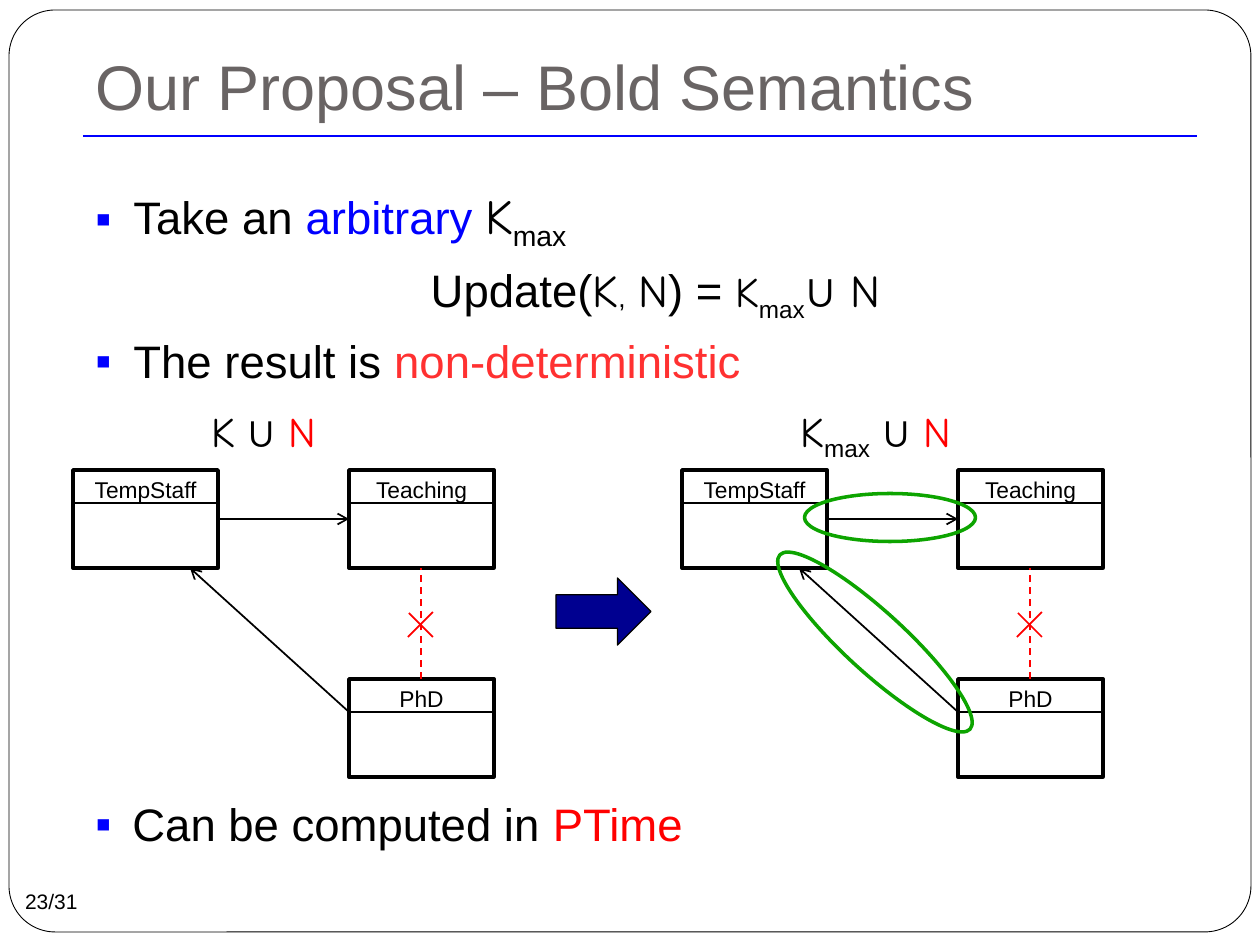
import dataclasses
import typing

import pptx
import pptx.dml.color
import pptx.enum.dml
import pptx.enum.shapes
import pptx.enum.text
import pptx.oxml.xmlchemy
import pptx.util
from pptx.oxml.ns import qn
import lxml.etree

PIXELS_PER_INCH = 126
SHAPES = pptx.enum.shapes.MSO_SHAPE
ALIGN = pptx.enum.text.PP_ALIGN
COMIC = "Comic Neue"
BLACK, WHITE, RED, BLUE, GREEN = "000000", "FFFFFF", "FF0000", "0000FF", "0DA400"


@dataclasses.dataclass(frozen=True)
class Run:
    text: str
    size: int
    color: str = BLACK
    font: str = "Arial"
    subscript: bool = False


@dataclasses.dataclass(frozen=True)
class Paragraph:
    runs: typing.Sequence[Run]
    alignment: typing.Any = ALIGN.LEFT
    indent: int = 0
    bullet: bool = False
    before: float = 0
    after: float = 0


@dataclasses.dataclass(frozen=True)
class Entity:
    name: str
    left: int
    top: int


@dataclasses.dataclass(frozen=True)
class Link:
    start: tuple[int, int]
    end: tuple[int, int]
    color: str = BLACK
    arrow: bool = False
    dashed: bool = False


ENTITY_WIDTH, ENTITY_HEIGHT, HEADER_HEIGHT = 145, 98, 33
ENTITIES = (Entity("TempStaff", 73, 470), Entity("Teaching", 349, 470), Entity("PhD", 349, 679))
LINKS = (
    Link((349, 712), (190, 568), arrow=True),
    Link((421, 679), (421, 568), RED, dashed=True),
    Link((433, 612), (408, 637), RED),
    Link((409, 613), (433, 637), RED),
    Link((218, 519), (349, 519), arrow=True),
)
DIAGRAM_OFFSETS = (0, 609)


def px(value: float) -> int:
    return round(value * 914400 / PIXELS_PER_INCH)


def rgb(color: str):
    return pptx.dml.color.RGBColor.from_string(color)


def set_attributes(target, values: dict) -> None:
    for name, value in values.items():
        setattr(target, name, value)


def write_text(frame, paragraphs: typing.Sequence[Paragraph], **frame_format) -> None:
    set_attributes(frame, {"word_wrap": True, "vertical_anchor": pptx.enum.text.MSO_ANCHOR.TOP, **frame_format})
    for index, item in enumerate(paragraphs):
        paragraph = frame.add_paragraph() if index else frame.paragraphs[0]
        set_attributes(paragraph, {
            "alignment": item.alignment,
            "space_before": pptx.util.Pt(item.before),
            "space_after": pptx.util.Pt(item.after),
        })
        properties = paragraph._p.get_or_add_pPr()
        if item.indent:
            properties.set("marL", str(px(item.indent)))
            properties.set("indent", str(-px(item.indent)))
        if item.bullet:
            color = lxml.etree.SubElement(properties, qn("a:buClr"))
            lxml.etree.SubElement(color, qn("a:srgbClr"), val=BLUE)
            lxml.etree.SubElement(properties, qn("a:buFont"), typeface="Arial")
            lxml.etree.SubElement(properties, qn("a:buChar"), char="▪")
        for piece in item.runs:
            run = paragraph.add_run()
            run.text = piece.text
            set_attributes(run.font, {"name": piece.font, "size": pptx.util.Pt(piece.size)})
            run.font.color.rgb = rgb(piece.color)
            if piece.subscript:
                run.font._element.set("baseline", "-25000")


def add_text(slide, left: int, top: int, width: int, height: int, *paragraphs: Paragraph, **frame_format) -> None:
    box = slide.shapes.add_textbox(px(left), px(top), px(width), px(height))
    write_text(box.text_frame, paragraphs, **frame_format)


def add_shape(slide, kind, left: int, top: int, width: int, height: int,
              fill: str | None, line: str, weight: float, rotation: float = 0):
    shape = slide.shapes.add_shape(kind, px(left), px(top), px(width), px(height))
    shape.shadow.inherit = False
    shape.rotation = rotation
    if fill:
        shape.fill.solid()
        shape.fill.fore_color.rgb = rgb(fill)
    else:
        shape.fill.background()
    shape.line.color.rgb = rgb(line)
    shape.line.width = pptx.util.Pt(weight)
    return shape


def add_link(slide, link: Link, offset: int = 0) -> None:
    (x1, y1), (x2, y2) = link.start, link.end
    connector = slide.shapes.add_connector(
        pptx.enum.shapes.MSO_CONNECTOR.STRAIGHT, px(x1 + offset), px(y1), px(x2 + offset), px(y2))
    connector.line.color.rgb = rgb(link.color)
    connector.line.width = pptx.util.Pt(1)
    if link.dashed:
        connector.line.dash_style = pptx.enum.dml.MSO_LINE.DASH
    if link.arrow:
        lxml.etree.SubElement(connector.line._get_or_add_ln(), qn("a:tailEnd"), type="arrow")
    lxml.etree.SubElement(connector._element.spPr, qn("a:effectLst"))


def add_entity(slide, entity: Entity, offset: int) -> None:
    left = entity.left + offset
    box = add_shape(slide, SHAPES.RECTANGLE, left, entity.top, ENTITY_WIDTH, ENTITY_HEIGHT, WHITE, BLACK, 2)
    write_text(box.text_frame, [Paragraph([Run(entity.name, 13)], ALIGN.CENTER, after=12)])
    header = entity.top + HEADER_HEIGHT
    add_link(slide, Link((left, header), (left + ENTITY_WIDTH, header)))


def add_diagram(slide, offset: int) -> None:
    for entity in ENTITIES:
        add_entity(slide, entity, offset)
    for link in LINKS:
        add_link(slide, link, offset)


def main() -> None:
    presentation = pptx.Presentation()
    set_attributes(presentation, {"slide_width": px(1260), "slide_height": px(945)})
    slide = presentation.slides.add_slide(presentation.slide_layouts[6])

    frame = add_shape(slide, SHAPES.ROUNDED_RECTANGLE, 9, 10, 1242, 922, WHITE, BLACK, 0.5)
    frame.adjustments[0] = 0.05
    add_link(slide, Link((83, 136), (1197, 136), BLUE))
    add_text(slide, 83, 38, 1114, 98, Paragraph([Run("Our Proposal – Bold Semantics", 36, "696464")]),
             vertical_anchor=pptx.enum.text.MSO_ANCHOR.BOTTOM, margin_bottom=px(13))

    add_text(
        slide, 83, 179, 1145, 222,
        Paragraph([Run("Take an ", 26), Run("arbitrary ", 26, BLUE), Run("K", 28, font=COMIC),
                   Run("max", 28, subscript=True)], indent=38, bullet=True, before=5.8),
        Paragraph([Run("Update(", 26), Run("K", 26, font=COMIC), Run(",", 15), Run(" ", 26),
                   Run("N", 26, font=COMIC), Run(") = ", 26), Run("K", 24, font=COMIC),
                   Run("max", 24, subscript=True), Run("∪ ", 26), Run("N", 26, font=COMIC)],
                  ALIGN.CENTER, indent=38, before=5.8),
        Paragraph([Run("The result is ", 26), Run("non-deterministic", 26, "FF3131")],
                  indent=38, bullet=True, before=5.8, after=12),
    )

    for offset in DIAGRAM_OFFSETS:
        add_diagram(slide, offset)
    add_shape(slide, SHAPES.RIGHT_ARROW, 556, 578, 95, 67, "000090", BLACK, 0.75)
    add_shape(slide, SHAPES.OVAL, 845, 513, 60, 258, None, GREEN, 2, 312.5)
    add_shape(slide, SHAPES.OVAL, 866, 432, 48, 171, None, GREEN, 2, 270)

    known = Run("K", 24, font=COMIC)
    union = [Run(" ∪ ", 24), Run("N", 24, RED, COMIC)]
    add_text(slide, 150, 399, 228, 115, Paragraph([known, *union], ALIGN.CENTER))
    add_text(slide, 762, 399, 228, 115,
             Paragraph([known, Run("max", 24, subscript=True), *union], ALIGN.CENTER))
    add_text(slide, 83, 790, 953, 123,
             Paragraph([Run("Can be computed in ", 26), Run("PTime", 26, RED)], indent=37, bullet=True))
    add_text(slide, 6, 882, 84, 38, Paragraph([Run("23/31", 12)], ALIGN.RIGHT))
    presentation.save("out.pptx")


if __name__ == "__main__":
    main()
